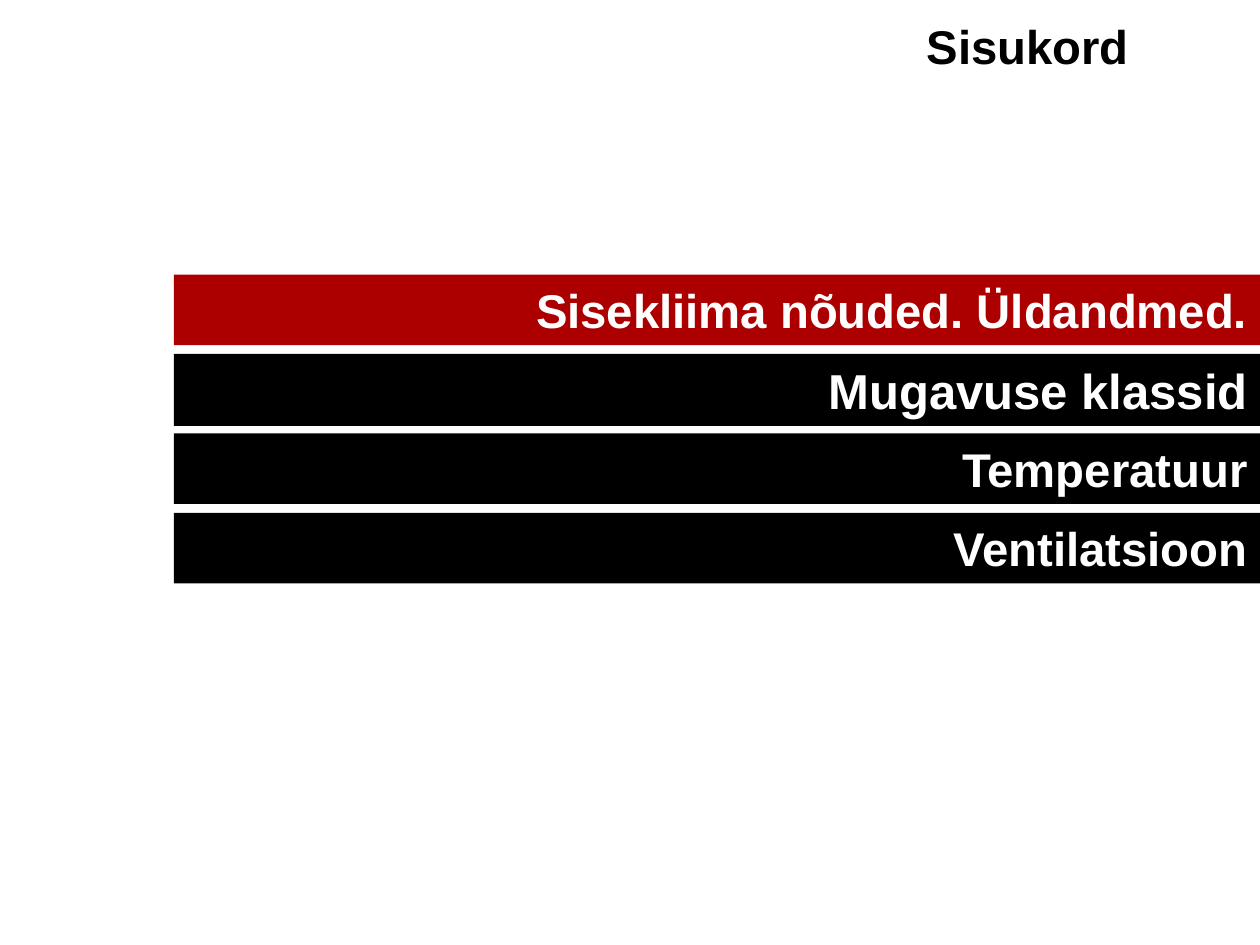
"""Build the table-of-contents slide with its first topic highlighted."""
from pptx import Presentation
from pptx.dml.color import RGBColor
from pptx.enum.shapes import MSO_SHAPE
from pptx.enum.text import MSO_ANCHOR, MSO_AUTO_SIZE, PP_ALIGN
from pptx.util import Inches, Pt

RECTANGLE = MSO_SHAPE.RECTANGLE
MIDDLE = MSO_ANCHOR.MIDDLE
NO_FIT = MSO_AUTO_SIZE.NONE
RIGHT = PP_ALIGN.RIGHT

HEADING = "Sisukord"
BLACK, WHITE, RED = "000000", "FFFFFF", "AC0000"
TOPICS = [
    ("Sisekliima nõuded. Üldandmed.", RED, 27, 0.56),
    ("Mugavuse klassid", BLACK, 28, 0.57),
    ("Temperatuur", BLACK, 27, 0.56),
    ("Ventilatsioon", BLACK, 27, 0.56),
]
SLIDE_WIDTH, SLIDE_HEIGHT = 10, 7.5
BAR_LEFT, FIRST_TOP, BAR_PITCH = 1.38, 2.18, 0.63
FRAME_FORMAT = {"word_wrap": True, "auto_size": NO_FIT, "vertical_anchor": MIDDLE}


def rgb(hex_color):
    return RGBColor.from_string(hex_color)


def write(shape, text, size, color):
    frame = shape.text_frame
    frame.text = text
    for name, value in FRAME_FORMAT.items():
        setattr(frame, name, value)
    paragraph = frame.paragraphs[0]
    paragraph.alignment = RIGHT
    font = paragraph.runs[0].font
    for name, value in {"name": "Arial", "size": Pt(size), "bold": True}.items():
        setattr(font, name, value)
    font.color.rgb = rgb(color)


def add_topic(slide, index, text, fill, size, height):
    top = FIRST_TOP + index * BAR_PITCH
    bar = slide.shapes.add_shape(
        RECTANGLE, Inches(BAR_LEFT), Inches(top),
        Inches(SLIDE_WIDTH - BAR_LEFT), Inches(height))
    bar.shadow.inherit = False
    bar.fill.solid()
    bar.fill.fore_color.rgb = rgb(fill)
    bar.line.fill.background()
    write(bar, text, size, WHITE)


def main():
    deck = Presentation()
    deck.slide_width = Inches(SLIDE_WIDTH)
    deck.slide_height = Inches(SLIDE_HEIGHT)
    slide = deck.slides.add_slide(deck.slide_layouts[5])

    title = slide.shapes.title
    title_box = {"left": 1.6, "top": 0, "width": 7.46, "height": 0.72}
    for name, value in title_box.items():
        setattr(title, name, Inches(value))
    write(title, HEADING, 27, BLACK)

    for index, topic in enumerate(TOPICS):
        add_topic(slide, index, *topic)
    deck.save("out.pptx")


if __name__ == "__main__":
    main()
